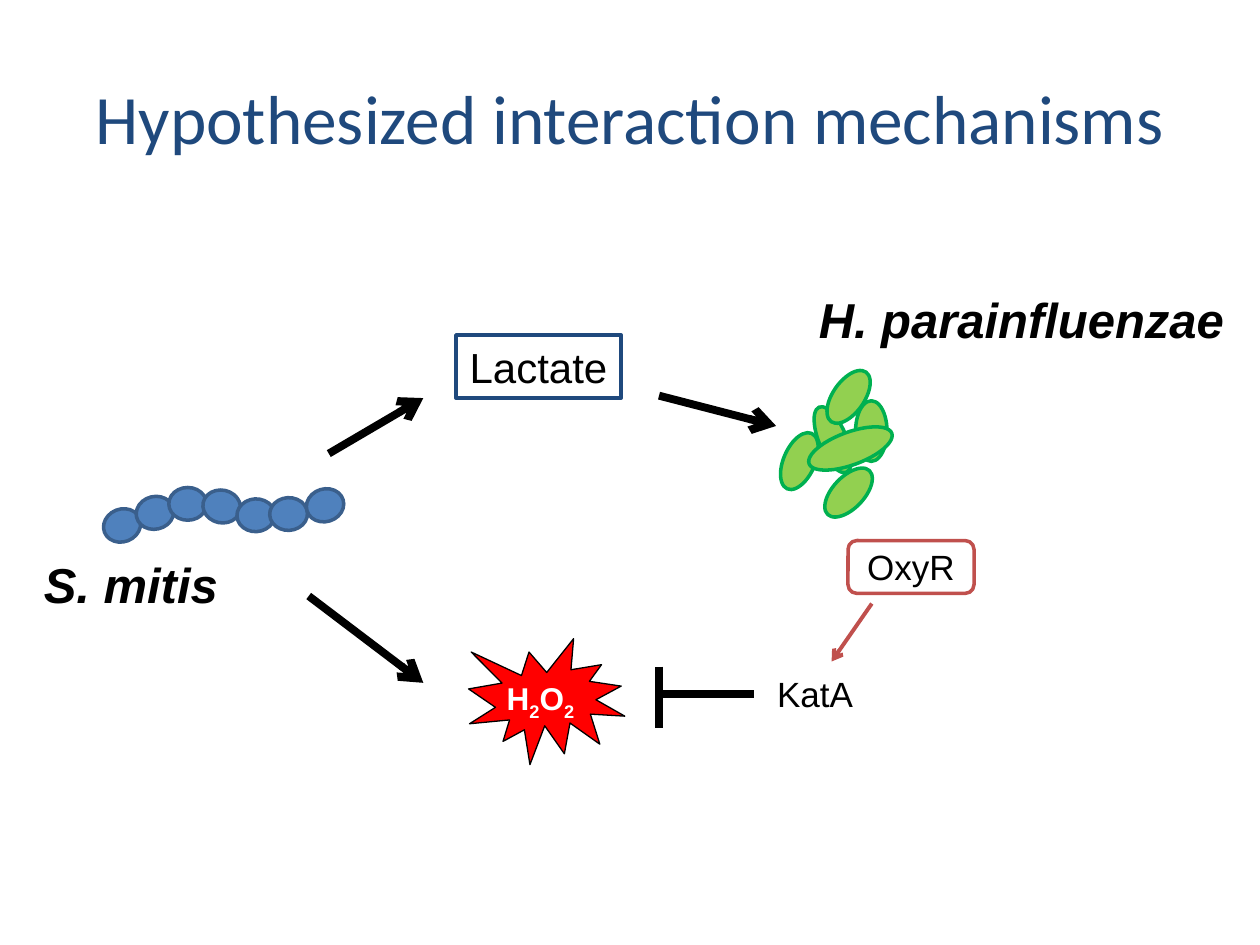
from dataclasses import dataclass

from lxml import etree
from pptx import Presentation
from pptx.dml.color import RGBColor
from pptx.enum import shapes, text
from pptx.oxml import ns
from pptx.util import Pt

SHAPE = shapes.MSO_SHAPE


@dataclass(frozen=True)
class Theme:
    navy: str = "1F497D"
    black: str = "000000"
    white: str = "FFFFFF"
    red: str = "FF0000"
    brick: str = "C0504D"
    rod_fill: str = "92D050"
    rod_line: str = "00B050"
    coccus_fill: str = "4F81BD"
    coccus_line: str = "3A5F8C"
    title_font: str = "Calibri"
    body_font: str = "Arial"
    title: float = 39.6
    species: float = 28
    metabolite: float = 24
    protein: float = 20
    formula: float = 18
    cell_line: float = 2
    box_line: float = 2.25
    arrow_line: float = 4.5


class Diagram:
    def __init__(self, slide, theme):
        self.slide, self.theme = slide, theme

    def group(self):
        return self.slide.shapes.add_group_shape()

    def outline(self, sp, color, width):
        sp.line.color.rgb = RGBColor.from_string(color)
        sp.line.width = Pt(width)

    def shape(self, kind, box, fill, line, width, rotation=0, parent=None):
        parent = parent or self.slide
        sp = parent.shapes.add_shape(kind, *map(Pt, box))
        sp.shadow.inherit = False
        sp.rotation = rotation
        sp.fill.solid()
        sp.fill.fore_color.rgb = RGBColor.from_string(fill)
        self.outline(sp, line, width)
        return sp

    def cells(self, cells, fill, line):
        """Group ellipses given as (left, top, width, height, rotation)."""
        group = self.group()
        for *box, rotation in cells:
            self.shape(SHAPE.OVAL, box, fill, line, self.theme.cell_line, rotation, group)

    def set_text(self, sp, words, size, color=None, font=None, bold=False, italic=False, center=False):
        """Fill sp with one paragraph; the digit after an underscore becomes a subscript."""
        p = sp.text_frame.paragraphs[0]
        p.alignment = text.PP_ALIGN.CENTER if center else text.PP_ALIGN.LEFT
        p.font.name = font or self.theme.body_font
        p.font.size = Pt(size)
        p.font.bold, p.font.italic = bold, italic
        p.font.color.rgb = RGBColor.from_string(color or self.theme.black)
        for i, part in enumerate(words.split("_")):
            if i:
                sub = p.add_run()
                sub.text, part = part[0], part[1:]
                sub.font._element.set("baseline", "-25000")
            if part:
                p.add_run().text = part

    def label(self, words, box, size, parent=None, **style):
        sp = (parent or self.slide).shapes.add_textbox(*map(Pt, box))
        sp.text_frame.word_wrap = False
        sp.text_frame.auto_size = text.MSO_AUTO_SIZE.SHAPE_TO_FIT_TEXT
        self.set_text(sp, words, size, **style)
        return sp

    def heading(self, words, box):
        sp = self.slide.shapes.add_textbox(*map(Pt, box))
        sp.text_frame.word_wrap = True
        sp.text_frame.vertical_anchor = text.MSO_ANCHOR.MIDDLE
        self.set_text(sp, words, self.theme.title, self.theme.navy, self.theme.title_font, center=True)

    def line(self, start, end, color, width, arrow=False, parent=None):
        parent = parent or self.slide
        cxn = parent.shapes.add_connector(shapes.MSO_CONNECTOR.STRAIGHT, *map(Pt, start + end))
        self.outline(cxn, color, width)
        if arrow:
            etree.SubElement(cxn.line._get_or_add_ln(), ns.qn("a:tailEnd"), type="arrow")
        etree.SubElement(cxn._element.spPr, ns.qn("a:effectLst"))


def main():
    prs = Presentation()
    prs.slide_width, prs.slide_height = Pt(720), Pt(540)
    t = Theme()
    d = Diagram(prs.slides.add_slide(prs.slide_layouts[6]), t)

    d.heading("Hypothesized interaction mechanisms", (36, 21.6, 648, 90))

    rods = [
        (447.8, 246.2, 18, 34.6, 23.7),
        (468, 231.1, 15.8, 40.3, 337.3),
        (488.9, 229, 18, 34.6, 0),
        (476.6, 231.1, 18.7, 50.4, 69.8),
        (475.9, 264.2, 18, 34.6, 43.5),
        (475.9, 209.5, 18, 34.6, 34.9),
    ]
    d.cells(rods, t.rod_fill, t.rod_line)

    chain = [(59, 290.9, 338.3), (77.8, 283.7, 346.8), (96.5, 278.6, 0), (115.9, 280.1, 12),
             (135.4, 285.1, 357), (154.1, 284.4, 357), (175, 279.4, 342.9)]
    cocci = [(x, y, 21.6, 18.7, rotation) for x, y, rotation in chain]
    d.cells(cocci, t.coccus_fill, t.coccus_line)

    peroxide = d.group()
    d.shape(SHAPE.EXPLOSION1, (267.8, 365, 89.3, 72), t.red, t.black, 0.75, parent=peroxide)
    d.label("H_2O_2", (281.5, 384.5, 54.7, 28.8), t.formula, peroxide,
            color=t.white, bold=True, center=True)

    lactate = d.label("Lactate", (260.6, 191.5, 94.3, 36), t.metabolite, center=True)
    d.outline(lactate, t.navy, t.box_line)

    for name, box in [("S. mitis", (18, 313.2, 115.2, 41)),
                      ("H. parainfluenzae", (460.8, 162, 249.1, 41))]:
        d.label(name, box, t.species, bold=True, italic=True)

    for start, end in [((187.9, 259.2), (241.9, 227.5)),
                       ((376.6, 226.1), (443.5, 243.4)),
                       ((176.4, 340.6), (241.9, 390.2))]:
        d.line(start, end, t.black, t.arrow_line, arrow=True)

    inhibition = d.group()
    for start, end in [((430.6, 396.7), (376.6, 396.7)), ((376.6, 380.9), (376.6, 416.2))]:
        d.line(start, end, t.black, t.arrow_line, parent=inhibition)

    d.label("KatA", (437, 380.9, 58.3, 31.7), t.protein)
    oxyr = d.shape(SHAPE.ROUNDED_RECTANGLE, (484.6, 308.9, 72, 30.2), t.white, t.brick, t.cell_line)
    d.set_text(oxyr, "OxyR", t.protein, center=True)
    d.line((498.2, 344.9), (475.2, 378), t.brick, t.box_line, arrow=True)

    prs.save("out.pptx")


if __name__ == "__main__":
    main()
